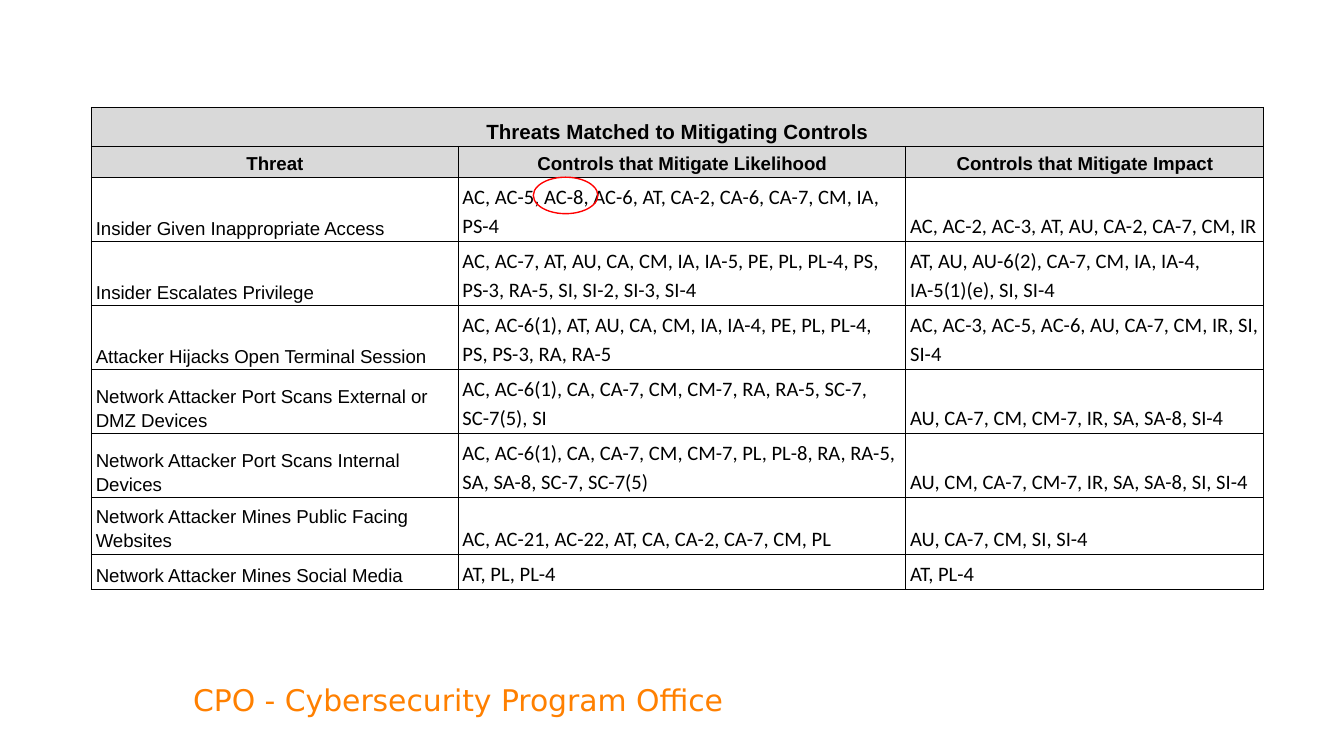
from lxml.etree import SubElement
from pptx import Presentation
from pptx.dml.color import RGBColor
from pptx.enum.shapes import MSO_SHAPE
from pptx.enum.text import MSO_ANCHOR, PP_ALIGN
from pptx.oxml.ns import qn
from pptx.util import Cm, Pt

BLACK = RGBColor(0x00, 0x00, 0x00)
GRAY = RGBColor(0xD9, 0xD9, 0xD9)
ORANGE = RGBColor(0xFF, 0x80, 0x00)
RED = RGBColor(0xFF, 0x00, 0x00)

# Content
FOOTER = "CPO - Cybersecurity Program Office"
TITLE = "Threats Matched to Mitigating Controls"
HEADINGS = ("Threat", "Controls that Mitigate Likelihood", "Controls that Mitigate Impact")
THREATS = [
    ("Insider Given Inappropriate Access",
     "AC, AC-5, AC-8, AC-6, AT, CA-2, CA-6, CA-7, CM, IA, PS-4",
     "AC, AC-2, AC-3, AT, AU, CA-2, CA-7, CM, IR"),
    ("Insider Escalates Privilege",
     "AC, AC-7, AT, AU, CA, CM, IA, IA-5, PE, PL, PL-4, PS, PS-3, RA-5, SI, SI-2, SI-3, SI-4",
     "AT, AU, AU-6(2), CA-7, CM, IA, IA-4, IA-5(1)(e), SI, SI-4"),
    ("Attacker Hijacks Open Terminal Session",
     "AC, AC-6(1), AT, AU, CA, CM, IA, IA-4, PE, PL, PL-4, PS, PS-3, RA, RA-5",
     "AC, AC-3, AC-5, AC-6, AU, CA-7, CM, IR, SI, SI-4"),
    ("Network Attacker Port Scans External or DMZ Devices",
     "AC, AC-6(1), CA, CA-7, CM, CM-7, RA, RA-5, SC-7, SC-7(5), SI",
     "AU, CA-7, CM, CM-7, IR, SA, SA-8, SI-4"),
    ("Network Attacker Port Scans Internal Devices",
     "AC, AC-6(1), CA, CA-7, CM, CM-7, PL, PL-8, RA, RA-5, SA, SA-8, SC-7, SC-7(5)",
     "AU, CM, CA-7, CM-7, IR, SA, SA-8, SI, SI-4"),
    ("Network Attacker Mines Public Facing Websites",
     "AC, AC-21, AC-22, AT, CA, CA-2, CA-7, CM, PL",
     "AU, CA-7, CM, SI, SI-4"),
    ("Network Attacker Mines Social Media", "AT, PL, PL-4", "AT, PL-4"),
]
COLUMN_WIDTHS = (6.93, 8.46, 6.76)
ROW_HEIGHTS = (0.74, 0.56, *[1.21] * 5, 1.01, 0.66)


def write_text(frame, text, size, font="Arial", color=BLACK, bold=False,
               align=PP_ALIGN.LEFT, spacing=1.0):
    frame.word_wrap = True
    paragraph = frame.paragraphs[0]
    paragraph.alignment = align
    paragraph.line_spacing = spacing
    run = paragraph.add_run()
    run.text = text
    run.font.size = Pt(size)
    run.font.name = font
    run.font.bold = bold
    run.font.color.rgb = color


def add_borders(cell):
    properties = cell._tc.get_or_add_tcPr()
    for index, side in enumerate(("lnL", "lnR", "lnT", "lnB")):
        line = properties.makeelement(qn(f"a:{side}"), {"w": str(Pt(0.75))})
        properties.insert(index, line)
        fill = SubElement(line, qn("a:solidFill"))
        SubElement(fill, qn("a:srgbClr"), val=str(BLACK))


def add_threat_table(slide):
    rows = [(TITLE, "", ""), HEADINGS, *THREATS]
    table = slide.shapes.add_table(
        len(rows), len(COLUMN_WIDTHS), Cm(1.73), Cm(2.03),
        Cm(sum(COLUMN_WIDTHS)), Cm(sum(ROW_HEIGHTS))).table
    for column, width in zip(table.columns, COLUMN_WIDTHS):
        column.width = Cm(width)
    for row, height in zip(table.rows, ROW_HEIGHTS):
        row.height = Cm(height)

    for row_index, texts in enumerate(rows):
        is_header = row_index < 2
        for column_index, text in enumerate(texts):
            cell = table.cell(row_index, column_index)
            cell.vertical_anchor = MSO_ANCHOR.BOTTOM
            cell.margin_left = cell.margin_right = Cm(0.08)
            cell.margin_top = cell.margin_bottom = Cm(0.05)
            if is_header:
                cell.fill.solid()
                cell.fill.fore_color.rgb = GRAY
            else:
                cell.fill.background()
            add_borders(cell)
            if text:
                is_controls = not is_header and column_index > 0
                write_text(cell.text_frame, text,
                           size=11 if is_controls or row_index == 0 else 10,
                           font="Calibri" if is_controls else "Arial",
                           bold=is_header, spacing=1.15,
                           align=PP_ALIGN.CENTER if is_header else PP_ALIGN.LEFT)
    table.cell(0, 0).merge(table.cell(0, len(COLUMN_WIDTHS) - 1))


def main():
    presentation = Presentation()
    presentation.slide_width, presentation.slide_height = Cm(25.4), Cm(14.29)
    slide = presentation.slides.add_slide(presentation.slide_layouts[6])

    # Footer
    footer = slide.shapes.add_textbox(Cm(3.4), Cm(12.85), Cm(12.07), Cm(0.76))
    footer.text_frame.vertical_anchor = MSO_ANCHOR.MIDDLE
    write_text(footer.text_frame, FOOTER, size=16, font="DejaVu Sans", color=ORANGE)

    add_threat_table(slide)

    # Ring around AC-8
    ring = slide.shapes.add_shape(MSO_SHAPE.OVAL, Cm(10.08), Cm(3.35), Cm(1.22), Cm(0.69))
    ring.shadow.inherit = False
    ring.fill.background()
    ring.line.color.rgb = RED
    ring.line.width = Pt(0.75)

    presentation.save("out.pptx")


if __name__ == "__main__":
    main()
